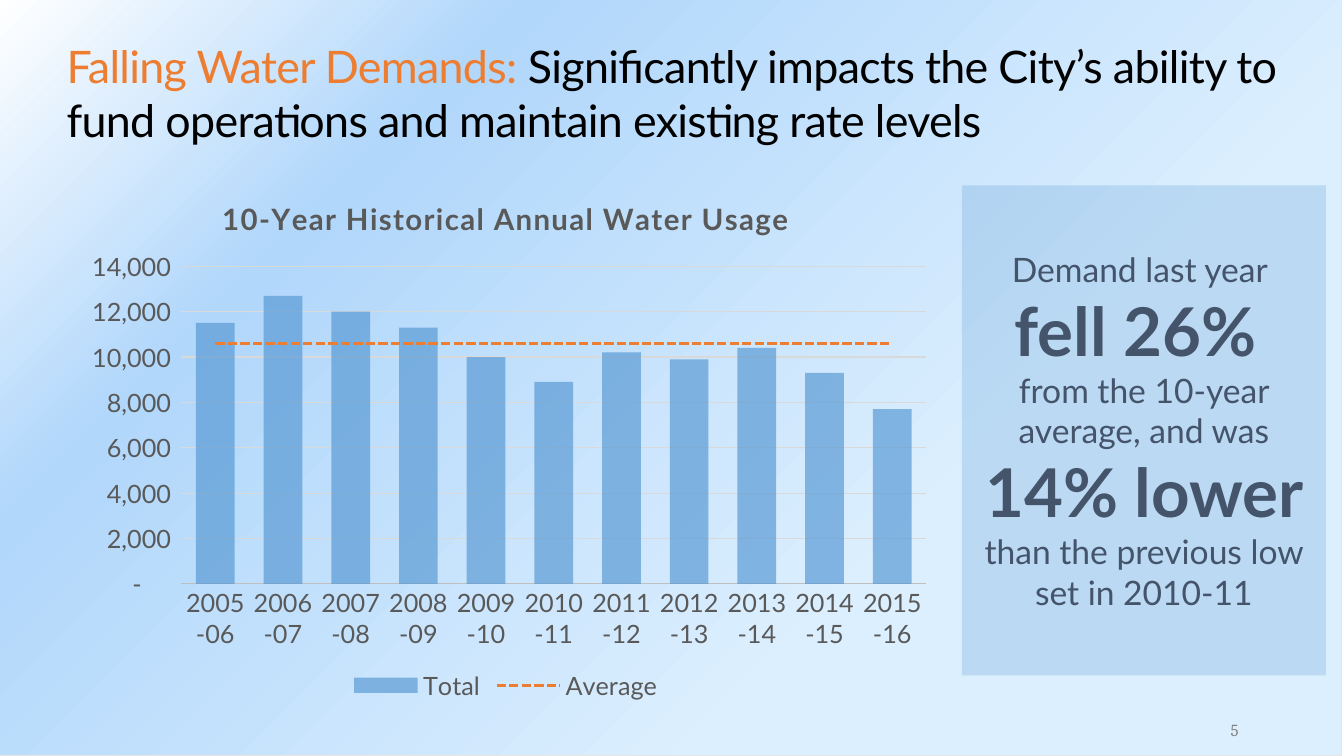
from lxml import etree
from pptx import Presentation
from pptx.chart.data import CategoryChartData
from pptx.dml.color import RGBColor
from pptx.enum.chart import (
    XL_CHART_TYPE, XL_LEGEND_POSITION, XL_MARKER_STYLE, XL_TICK_MARK)
from pptx.enum.dml import MSO_LINE
from pptx.enum.shapes import MSO_SHAPE
from pptx.enum.text import MSO_ANCHOR, MSO_AUTO_SIZE, PP_ALIGN
from pptx.oxml import parse_xml
from pptx.oxml.ns import nsdecls, qn
from pptx.util import Inches, Pt

BLUE, ORANGE, SLATE, GRAY = "5B9BD5", "ED7D31", "44546A", "595959"


def style(font, size, color, bold=False, name="Lato"):
    font.size, font.bold, font.name = Pt(size), bold, name
    font.color.rgb = RGBColor.from_string(color)


def fill_solid(fill, color, opacity):
    fill.solid()
    fill.fore_color.rgb = RGBColor.from_string(color)
    tint = fill._xPr.find(qn("a:solidFill"))[0]
    etree.SubElement(tint, qn("a:alpha")).set("val", str(opacity * 1000))


deck = Presentation()
deck.slide_width, deck.slide_height = Inches(13.33), Inches(7.5)
page = deck.slides.add_slide(deck.slide_layouts[5])

# Gradient backdrop, placed behind everything else
backdrop = page.shapes.add_shape(
    MSO_SHAPE.RECTANGLE, Inches(-0.02), 0, Inches(13.33), Inches(7.5))
backdrop.shadow.inherit = False
backdrop.line.color.rgb = RGBColor.from_string("E7E6E6")
backdrop.line.width = Pt(0.75)
stops = "".join(
    f'<a:gs pos="{position * 1000}"><a:srgbClr val="{color}"/></a:gs>'
    for position, color in [(30, "DCEFFE"), (75, "B1D7FB"), (100, "FFFFFF")])
gradient = parse_xml(
    f'<a:gradFill {nsdecls("a")} rotWithShape="1"><a:gsLst>{stops}</a:gsLst>'
    '<a:path path="circle"><a:fillToRect l="100000" t="100000"/></a:path>'
    '</a:gradFill>')
backdrop._element.spPr.find(qn("a:prstGeom")).addnext(gradient)
page.shapes._spTree.insert(2, backdrop._element)

# Title
title = page.shapes.title
title.left, title.top = Inches(0.56), Inches(0.33)
title.width, title.height = Inches(12.22), Inches(1.17)
title.text_frame.auto_size = MSO_AUTO_SIZE.NONE
title.text_frame.vertical_anchor = MSO_ANCHOR.MIDDLE
para = title.text_frame.paragraphs[0]
para.alignment = PP_ALIGN.LEFT
for text, color in [
        ("Falling Water Demands:", ORANGE),
        (" Significantly impacts the City’s ability to fund operations "
         "and maintain existing rate levels", "000000")]:
    span = para.add_run()
    span.text = text
    style(span.font, 32, color)
    span.font._element.set("spc", "-50")

# Usage chart
usage = [11500, 12700, 12000, 11300, 10000, 8900, 10200, 9900, 10400, 9300, 7700]
data = CategoryChartData(number_format="#,##0")
data.categories = [f"{year}-{year % 100 + 1:02}" for year in range(2005, 2016)]
data.add_series("Total", usage)
data.add_series("Average", [10600] * len(usage))
chart = page.shapes.add_chart(
    XL_CHART_TYPE.COLUMN_CLUSTERED, Inches(0.67), Inches(1.75),
    Inches(8.69), Inches(5.25), data).chart
style(chart.font, 18, GRAY)
chart.has_legend = True
chart.legend.position = XL_LEGEND_POSITION.BOTTOM
chart.legend.include_in_layout = False
style(chart.legend.font, 18, GRAY)
chart.has_title = True
chart.chart_title.text_frame.text = "10-Year Historical Annual Water Usage"
heading = chart.chart_title.text_frame.paragraphs[0].runs[0].font
style(heading, 21, GRAY, bold=True)
heading._element.set("spc", "100")

bars = chart.plots[0]
bars.gap_width = 75
bars.vary_by_categories = False
fill_solid(bars.series[0].format.fill, BLUE, 70)

# Axes
years, amounts = chart.category_axis, chart.value_axis
for axis in (years, amounts):
    axis.major_tick_mark = axis.minor_tick_mark = XL_TICK_MARK.NONE
    style(axis.tick_labels.font, 18, GRAY)
years.format.line.color.rgb = RGBColor.from_string("BFBFBF")
years.format.line.width = Pt(0.75)
amounts.format.line.fill.background()
amounts.minimum_scale, amounts.maximum_scale, amounts.major_unit = 0, 14000, 2000
amounts.major_gridlines.format.line.color.rgb = RGBColor.from_string("D9D9D9")
amounts.major_gridlines.format.line.width = Pt(0.75)
amounts.tick_labels.number_format = '_(* #,##0_);_(* \\(#,##0\\);_(* "-"??_);_(@_)'
amounts.tick_labels.number_format_is_linked = False

# Average moves from the bars to a line plot on the same axes
bar_plot = chart._chartSpace.find(".//" + qn("c:barChart"))
average = bar_plot.findall(qn("c:ser"))[1]
for flag in average.findall(qn("c:invertIfNegative")):
    average.remove(flag)
line_plot = parse_xml(
    f'<c:lineChart {nsdecls("c")}><c:grouping val="standard"/>'
    '<c:varyColors val="0"/><c:marker val="1"/></c:lineChart>')
line_plot.insert(2, average)
for axis_id in bar_plot.findall(qn("c:axId")):
    etree.SubElement(line_plot, qn("c:axId")).set("val", axis_id.get("val"))
bar_plot.addnext(line_plot)
average_line = chart.plots[1].series[0]
average_line.smooth = False
average_line.marker.style = XL_MARKER_STYLE.NONE
average_line.format.line.color.rgb = RGBColor.from_string(ORANGE)
average_line.format.line.width = Pt(2.25)
average_line.format.line.dash_style = MSO_LINE.SQUARE_DOT

# Fixed position of the plot area
plot_area = bar_plot.getparent()
for old in plot_area.findall(qn("c:layout")):
    plot_area.remove(old)
plot_area.insert(0, parse_xml(
    f'<c:layout {nsdecls("c")}><c:manualLayout><c:layoutTarget val="inner"/>'
    '<c:xMode val="edge"/><c:yMode val="edge"/><c:x val="0.13"/><c:y val="0.17"/>'
    '<c:w val="0.85"/><c:h val="0.6"/></c:manualLayout></c:layout>'))

# Demand panel
panel = page.shapes.add_shape(
    MSO_SHAPE.RECTANGLE, Inches(9.54), Inches(1.84), Inches(3.61), Inches(4.86))
panel.shadow.inherit = False
panel.line.fill.background()
fill_solid(panel.fill, BLUE, 25)
frame = panel.text_frame
frame.word_wrap = True
frame.vertical_anchor = MSO_ANCHOR.MIDDLE
message = [
    [("Demand last year ", False)],
    [("fell 26% ", True)],
    [("from the 10-year average, and was", False)],
    [("14% lower ", True), ("than the previous low set in 2010-11", False)],
]
for index, spans in enumerate(message):
    para = frame.add_paragraph() if index else frame.paragraphs[0]
    para.alignment = PP_ALIGN.CENTER
    for text, strong in spans:
        span = para.add_run()
        span.text = text
        style(span.font, 48 if strong else 24, SLATE, strong)

# Page number
box = page.shapes.add_textbox(Inches(11.79), Inches(7.09), Inches(0.91), Inches(0.3))
frame = box.text_frame
frame.word_wrap = True
frame.vertical_anchor = MSO_ANCHOR.BOTTOM
frame.margin_left = frame.margin_right = Inches(0.05)
frame.margin_top = frame.margin_bottom = Inches(0.05)
frame.text = "5"
frame.paragraphs[0].alignment = PP_ALIGN.CENTER
style(frame.paragraphs[0].runs[0].font, 12, "808080", name="Cambria")

deck.save("out.pptx")
